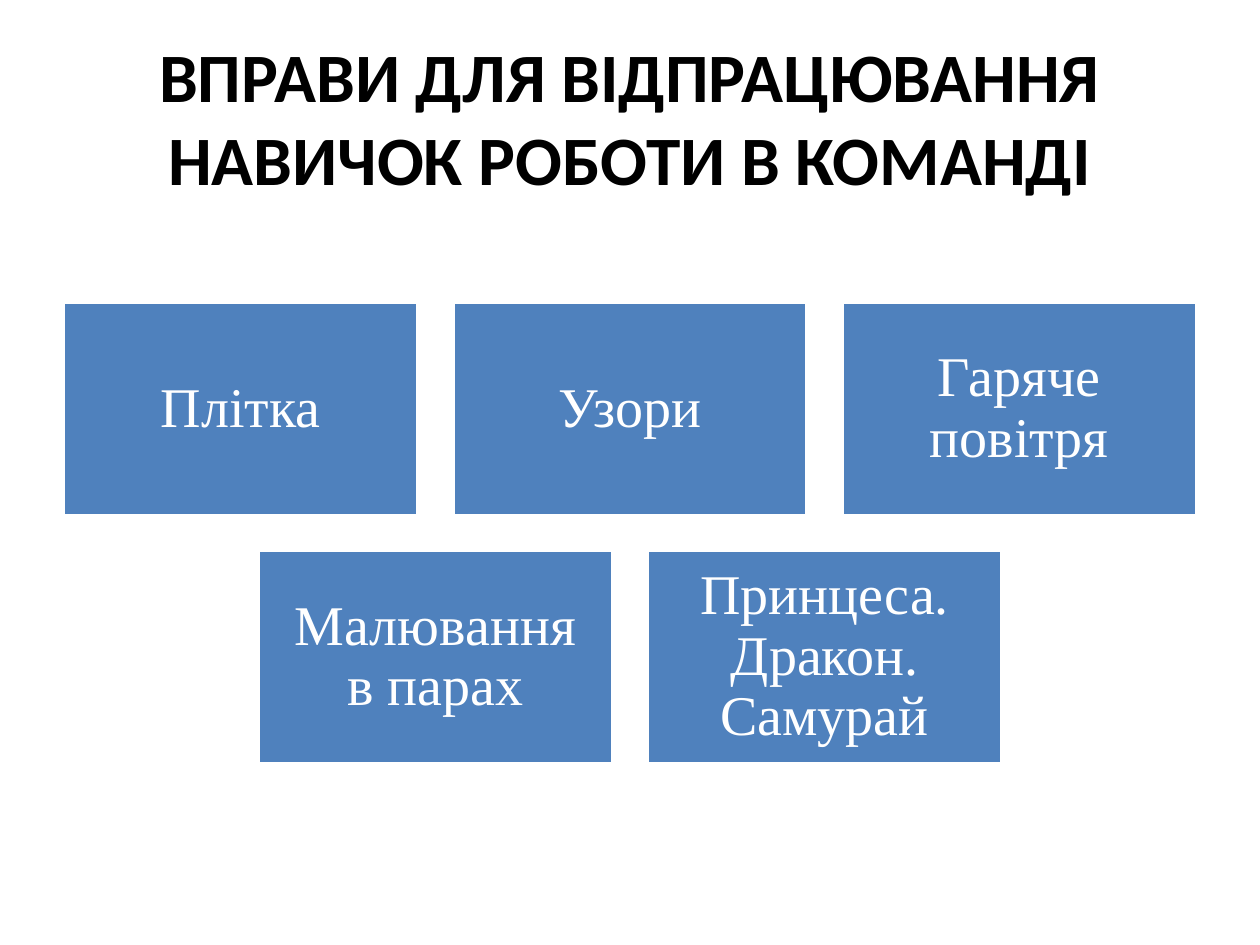
from pptx import Presentation
from pptx.dml.color import RGBColor as Color
from pptx.enum.shapes import MSO_SHAPE as Kind
from pptx.enum.text import MSO_ANCHOR as Anchor, PP_ALIGN as Align
from pptx.util import Inches, Pt

BLUE = Color(0x4F, 0x81, 0xBD)
WHITE = Color(0xFF, 0xFF, 0xFF)
BLACK = Color(0, 0, 0)

WIDE = 10
CARD_W, CARD_H, GAP = 2.81, 1.69, 0.28
TOP = 2.4
TITLE = "ВПРАВИ ДЛЯ ВІДПРАЦЮВАННЯ НАВИЧОК РОБОТИ В КОМАНДІ"
ROWS = [
    ["Плітка", "Узори", "Гаряче повітря"],
    ["Малювання в парах", "Принцеса. Дракон. Самурай"],
]

HEAD = {"name": "Calibri", "size": Pt(39.6), "bold": True}
BODY = {"name": "Times New Roman", "size": Pt(32), "bold": False}
SIDES = ("margin_left", "margin_top", "margin_right", "margin_bottom")
PAD = {side: Inches(0.13) for side in SIDES}


def style(item, values):
    for key, value in values.items():
        setattr(item, key, value)


def write(frame, text, font, color, spacing=1.0):
    style(frame, {"word_wrap": True, "vertical_anchor": Anchor.MIDDLE})
    para = frame.paragraphs[0]
    style(para, {"alignment": Align.CENTER, "line_spacing": spacing})
    run = para.add_run()
    run.text = text
    style(run.font, font)
    run.font.color.rgb = color


def add_title(slide):
    box = slide.shapes.add_textbox(
        Inches(0.5), Inches(0.3), Inches(9), Inches(1.25))
    write(box.text_frame, TITLE, HEAD, BLACK)


def add_card(slide, text, left, top):
    card = slide.shapes.add_shape(
        Kind.RECTANGLE, Inches(left), Inches(top),
        Inches(CARD_W), Inches(CARD_H))
    card.shadow.inherit = False
    card.fill.solid()
    card.fill.fore_color.rgb = BLUE
    card.line.color.rgb = WHITE
    card.line.width = Pt(2)
    style(card.text_frame, PAD)
    write(card.text_frame, text, BODY, WHITE, 0.9)


def add_row(slide, names, top):
    span = len(names) * (CARD_W + GAP) - GAP
    left = (WIDE - span) / 2
    for col, name in enumerate(names):
        add_card(slide, name, left + col * (CARD_W + GAP), top)


def main():
    deck = Presentation()
    style(deck, {"slide_width": Inches(WIDE), "slide_height": Inches(7.5)})
    slide = deck.slides.add_slide(deck.slide_layouts[6])
    add_title(slide)
    for row, names in enumerate(ROWS):
        add_row(slide, names, TOP + row * (CARD_H + GAP))
    deck.save("out.pptx")


if __name__ == "__main__":
    main()
